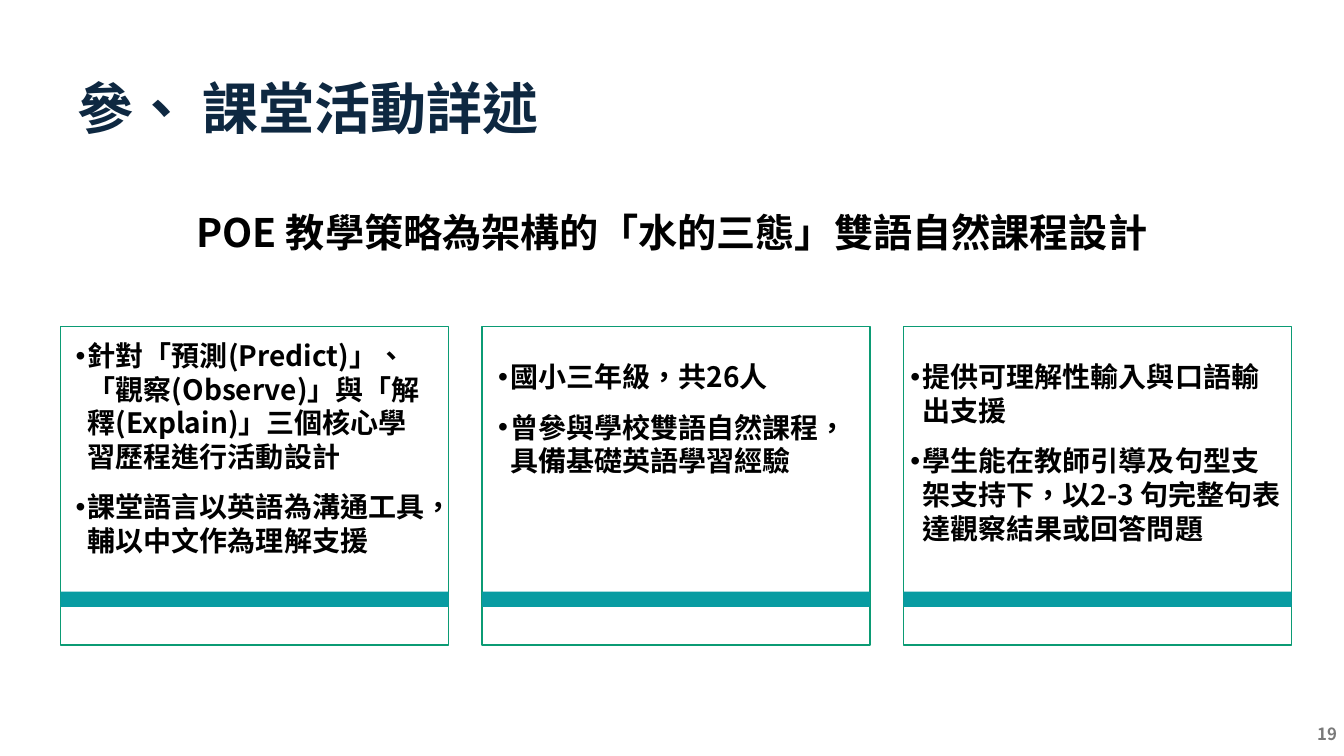
"""Build the slide on the POE lesson design with three outlined cards."""
from lxml import etree
from pptx import Presentation
from pptx import util as u
from pptx.dml.color import RGBColor
from pptx.enum import shapes, text
from pptx.oxml.ns import qn

NAVY = RGBColor(0x0E, 0x28, 0x41)
BLACK = RGBColor(0x00, 0x00, 0x00)
WHITE = RGBColor(0xFF, 0xFF, 0xFF)
GREEN = RGBColor(0x0B, 0x9B, 0x74)
TEAL = RGBColor(0x08, 0x9C, 0xA2)
GRAY = RGBColor(0x79, 0x79, 0x79)

CARD_LEFT, CARD_TOP, CARD_WIDTH, CARD_HEIGHT = 0.6, 3.24, 3.85, 3.16
CARD_GAP = 0.33
BAND_TOP, BAND_HEIGHT = 5.87, 0.15

CARDS = [
    ((0.46, 3.31, 3.95, 2.46), [
        "針對「預測(Predict)」、「觀察(Observe)」與「解釋(Explain)」三個核心學習歷程進行活動設計",
        "課堂語言以英語為溝通工具，輔以中文作為理解支援"]),
    ((4.65, 3.52, 3.98, 1.45), [
        "國小三年級，共26人",
        "曾參與學校雙語自然課程，具備基礎英語學習經驗"]),
    ((8.74, 3.52, 4.08, 2.12), [
        "提供可理解性輸入與口語輸出支援",
        "學生能在教師引導及句型支架支持下，以2-3 句完整句表達觀察結果或回答問題"]),
]


class SlideBuilder:
    """Hold the text style and the current slide."""

    font = "Noto Sans CJK SC"
    language = "zh-TW"
    line_ratio = 1.2

    def __init__(self, presentation):
        self.slide = presentation.slides.add_slide(presentation.slide_layouts[4])
        self.placeholders = {p.placeholder_format.idx: p for p in self.slide.placeholders}

    def place(self, index, box):
        """Move a template placeholder to the box and bring it to the front."""
        shape = self.placeholders[index]
        shape.left, shape.top, shape.width, shape.height = map(u.Inches, box)
        self.slide.shapes.element.append(shape.element)
        return shape

    def set_text(self, shape, lines, size, color, align=text.PP_ALIGN.LEFT,
                 anchor=text.MSO_ANCHOR.TOP, bullets=False):
        """Fill a shape with styled paragraphs."""
        frame = shape.text_frame
        frame.word_wrap = True
        frame.auto_size = text.MSO_AUTO_SIZE.NONE
        frame.vertical_anchor = anchor
        frame.margin_left = frame.margin_right = u.Inches(0.1)
        frame.margin_top = frame.margin_bottom = u.Inches(0.05)
        for number, line in enumerate(lines):
            paragraph = frame.add_paragraph() if number else frame.paragraphs[0]
            if bullets:
                self.add_bullet(paragraph, color)
            paragraph.alignment = align
            paragraph.line_spacing = u.Pt(round(size * self.line_ratio))
            paragraph.space_before = u.Pt(6 if number else 0)
            paragraph.space_after = u.Pt(6 if bullets else 0)
            self.add_run(paragraph, line, size, color)

    def add_run(self, paragraph, line, size, color):
        """Add one bold run with the same Latin and East Asian font."""
        run = paragraph.add_run()
        run.text = line
        run.font.size = u.Pt(size)
        run.font.bold = True
        run.font.color.rgb = color
        run.font.name = self.font
        properties = run._r.get_or_add_rPr()
        properties.set("lang", self.language)
        etree.SubElement(properties, qn("a:ea")).set("typeface", self.font)

    def add_bullet(self, paragraph, color):
        """Give a paragraph a hanging bullet."""
        properties = paragraph._p.get_or_add_pPr()
        properties.set("marL", str(u.Inches(0.31)))
        properties.set("indent", str(u.Inches(-0.12)))
        bullet_color = etree.SubElement(properties, qn("a:buClr"))
        etree.SubElement(bullet_color, qn("a:srgbClr")).set("val", str(color))
        etree.SubElement(properties, qn("a:buFont")).set("typeface", "Arial")
        etree.SubElement(properties, qn("a:buChar")).set("char", "•")

    def add_rectangle(self, box, fill, line=None):
        """Add a flat rectangle with an optional outline."""
        shape = self.slide.shapes.add_shape(
            shapes.MSO_SHAPE.RECTANGLE, *map(u.Inches, box))
        shape.shadow.inherit = False
        shape.fill.solid()
        shape.fill.fore_color.rgb = fill
        if line is None:
            shape.line.fill.background()
        else:
            shape.line.color.rgb = line
            shape.line.width = u.Pt(1)

    def add_title(self, line):
        """Set the slide title."""
        self.set_text(self.place(0, (0.67, 0.48, 12, 1.17)), [line], 40, NAVY,
                      anchor=text.MSO_ANCHOR.MIDDLE)

    def add_heading(self, line):
        """Set the centred heading under the title."""
        self.set_text(self.place(1, (1.5, 2.01, 10.33, 0.57)), [line], 28, BLACK,
                      align=text.PP_ALIGN.CENTER)

    def add_card(self, column, list_box, items):
        """Add an outlined card with a band and a bulleted list."""
        left = CARD_LEFT + column * (CARD_WIDTH + CARD_GAP)
        self.add_rectangle((left, CARD_TOP, CARD_WIDTH, CARD_HEIGHT), WHITE, GREEN)
        self.add_rectangle((left, BAND_TOP, CARD_WIDTH, BAND_HEIGHT), TEAL)
        self.set_text(self.place(column + 2, list_box), items, 20, BLACK, bullets=True)

    def add_page_number(self, number):
        """Add the page number in the lower right corner."""
        box = self.slide.shapes.add_textbox(*map(u.Inches, (12.25, 7.03, 1.11, 0.4)))
        self.set_text(box, [number], 12, GRAY, align=text.PP_ALIGN.RIGHT,
                      anchor=text.MSO_ANCHOR.BOTTOM)


def main():
    presentation = Presentation()
    presentation.slide_width = u.Inches(13.33)
    presentation.slide_height = u.Inches(7.5)
    builder = SlideBuilder(presentation)
    builder.add_title("參、 課堂活動詳述")
    builder.add_heading("POE 教學策略為架構的「水的三態」雙語自然課程設計")
    for column, (list_box, items) in enumerate(CARDS):
        builder.add_card(column, list_box, items)
    builder.add_page_number("19")
    presentation.save("out.pptx")


if __name__ == "__main__":
    main()
